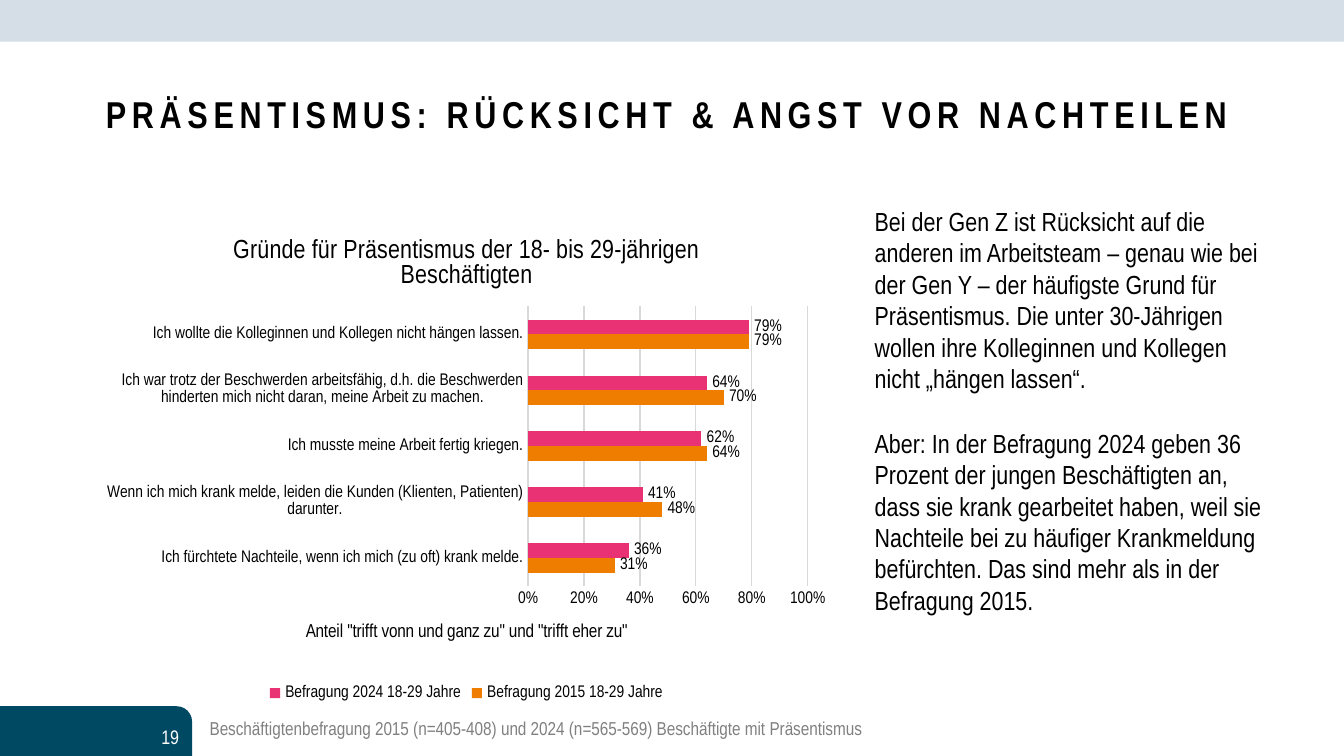
import pptx
import pptx.chart.data
import pptx.dml.color
import pptx.enum.chart
import pptx.enum.shapes
import pptx.enum.text
import pptx.oxml
import pptx.oxml.ns
import pptx.util

Inches = pptx.util.Inches
Pt = pptx.util.Pt
FONT = "Arial Narrow"
SLIDE_WIDTH = 10
SLIDE_HEIGHT = SLIDE_WIDTH * 9 / 16
CATEGORIES = [
    "Ich fürchtete Nachteile, wenn ich mich (zu oft) krank melde.",
    "Wenn ich mich krank melde, leiden die Kunden (Klienten, Patienten) darunter.",
    "Ich musste meine Arbeit fertig kriegen.",
    "Ich war trotz der Beschwerden arbeitsfähig, d.h. die Beschwerden "
    "hinderten mich nicht daran, meine Arbeit zu machen.",
    "Ich wollte die Kolleginnen und Kollegen nicht hängen lassen.",
]
SERIES = [
    ("Befragung 2015 18-29 Jahre", "EF7D00", [0.31, 0.48, 0.64, 0.70, 0.79]),
    ("Befragung 2024 18-29 Jahre", "E83274", [0.36, 0.41, 0.62, 0.64, 0.79]),
]
COMMENTARY = [
    "Bei der Gen Z ist Rücksicht auf die anderen im Arbeitsteam – genau wie bei "
    "der Gen Y – der häufigste Grund für Präsentismus. Die unter 30-Jährigen "
    "wollen ihre Kolleginnen und Kollegen nicht „hängen lassen“.",
    "Aber: In der Befragung 2024 geben 36 Prozent der jungen Beschäftigten an, "
    "dass sie krank gearbeitet haben, weil sie Nachteile bei zu häufiger "
    "Krankmeldung befürchten. Das sind mehr als in der Befragung 2015.",
]


def color(value):
    return pptx.dml.color.RGBColor.from_string(value)


def style_font(font, size, value="000000", bold=False):
    font.name = FONT
    font.size = Pt(size)
    font.bold = bold
    font.color.rgb = color(value)


def add_block(slide, kind, box, fill):
    shape = slide.shapes.add_shape(kind, *map(Inches, box))
    shape.shadow.inherit = False
    shape.fill.solid()
    shape.fill.fore_color.rgb = color(fill)
    shape.line.fill.background()
    return shape


def add_text(slide, box, texts, size, value="000000", bold=False, middle=False,
             align=pptx.enum.text.PP_ALIGN.LEFT, gap=0, inset=0.1, spacing=0):
    frame = slide.shapes.add_textbox(*map(Inches, box)).text_frame
    frame.word_wrap = True
    frame.margin_left = frame.margin_right = Inches(inset)
    frame.margin_top = frame.margin_bottom = Inches(0.05)
    anchors = pptx.enum.text.MSO_ANCHOR
    frame.vertical_anchor = anchors.MIDDLE if middle else anchors.TOP
    for index, text in enumerate(texts):
        paragraph = frame.add_paragraph() if index else frame.paragraphs[0]
        paragraph.alignment = align
        if index:
            paragraph.space_before = Pt(gap)
        run = paragraph.add_run()
        run.text = text
        style_font(run.font, size, value, bold)
        if spacing:
            run.font._element.set("spc", str(spacing * 100))


def add_layout(parent, following, chart_box, x, y, width=None, height=None):
    """Place a chart part, in inches from the chart corner, before the following tags."""
    chart_width, chart_height = chart_box[2:]
    values = {"xMode": "edge", "yMode": "edge",
              "x": x / chart_width, "y": y / chart_height}
    if width:
        values = {"layoutTarget": "inner", **values,
                  "w": width / chart_width, "h": height / chart_height}
    parts = "".join(f'<c:{tag} val="{value}"/>' for tag, value in values.items())
    namespace = pptx.oxml.ns.nsdecls("c")
    layout = pptx.oxml.parse_xml(
        f"<c:layout {namespace}><c:manualLayout>{parts}</c:manualLayout></c:layout>")
    for old in parent.findall(pptx.oxml.ns.qn("c:layout")):
        parent.remove(old)
    parent.insert_element_before(layout, *following)


def add_chart_title(title, text, size, chart_box, x, y):
    run = title.text_frame.paragraphs[0].add_run()
    run.text = text
    style_font(run.font, size)
    add_layout(title._element, ("c:overlay", "c:spPr", "c:txPr"), chart_box, x, y)


def add_reasons_chart(slide, box):
    data = pptx.chart.data.CategoryChartData(number_format="###0%")
    data.categories = CATEGORIES
    for name, _, values in SERIES:
        data.add_series(name, values)
    chart = slide.shapes.add_chart(
        pptx.enum.chart.XL_CHART_TYPE.BAR_CLUSTERED, *map(Inches, box), data).chart
    style_font(chart.font, 10)

    # Titles and plot area
    add_chart_title(
        chart.chart_title,
        "Gründe für Präsentismus der 18- bis 29-jährigen Beschäftigten",
        14, box, 1.01, 0.13)
    add_chart_title(
        chart.value_axis.axis_title,
        'Anteil "trifft vonn und ganz zu" und "trifft eher zu"',
        10, box, 1.56, 3.02)
    plot = chart.plots[0]
    plot_area = plot._element.getparent()
    add_layout(plot_area, ("c:barChart",), box, 3.24, 0.69, 2.08, 2.08)

    # Axes
    for axis in (chart.category_axis, chart.value_axis):
        axis.major_tick_mark = pptx.enum.chart.XL_TICK_MARK.NONE
        axis.minor_tick_mark = pptx.enum.chart.XL_TICK_MARK.NONE
        style_font(axis.tick_labels.font, 9)
    value_axis = chart.value_axis
    value_axis.minimum_scale, value_axis.maximum_scale = 0, 1
    value_axis.major_unit = 0.2
    value_axis.tick_labels.number_format = "###0%"
    value_axis.tick_labels.number_format_is_linked = False
    value_axis.format.line.fill.background()
    value_axis.has_major_gridlines = True
    for line in (chart.category_axis.format.line,
                 value_axis.major_gridlines.format.line):
        line.color.rgb = color("D9D9D9")
        line.width = Pt(0.75)

    # Bars and value labels
    plot.gap_width = 182
    plot.overlap = 0
    plot.vary_by_categories = False
    for series, (_, fill, _) in zip(plot.series, SERIES):
        series.format.fill.solid()
        series.format.fill.fore_color.rgb = color(fill)
        labels = series.data_labels
        labels.show_value = True
        labels.number_format = "###0%"
        labels.number_format_is_linked = False
        labels.position = pptx.enum.chart.XL_LABEL_POSITION.OUTSIDE_END
        style_font(labels.font, 9)

    # Legend
    chart.has_legend = True
    chart.legend.position = pptx.enum.chart.XL_LEGEND_POSITION.BOTTOM
    chart.legend.include_in_layout = False
    style_font(chart.legend.font, 9)


def add_header(slide, left, top, width):
    add_block(slide, pptx.enum.shapes.MSO_SHAPE.RECTANGLE,
              (left, top, width, 0.31), "D5DEE6")
    add_text(slide, (left + 0.69, top + 0.3, width - 1.38, 1.09),
             ["PRÄSENTISMUS: RÜCKSICHT & ANGST VOR NACHTEILEN"],
             20, bold=True, middle=True, spacing=3)


def add_footer(slide, left, top, height):
    tab = add_block(slide, pptx.enum.shapes.MSO_SHAPE.ROUND_1_RECTANGLE,
                    (left, top, 1.43, height), "004963")
    tab.adjustments[0] = 0.31
    add_text(slide, (left + 0.34, top + 0.08, 1.09, 0.3), ["19"], 10.5, "FFFFFF",
             middle=True, align=pptx.enum.text.PP_ALIGN.RIGHT)
    add_text(slide, (left + 1.51, top + 0.03, 7.17, 0.29),
             ["Beschäftigtenbefragung 2015 (n=405-408) und 2024 (n=565-569) "
              "Beschäftigte mit Präsentismus"], 10, "808080", inset=0.05)


def main():
    presentation = pptx.Presentation()
    presentation.slide_width = Inches(SLIDE_WIDTH)
    presentation.slide_height = Inches(SLIDE_HEIGHT)
    slide = presentation.slides.add_slide(presentation.slide_layouts[6])
    add_header(slide, 0, 0, SLIDE_WIDTH)
    add_reasons_chart(slide, (0.69, 1.59, 5.56, 3.67))
    add_text(slide, (6.41, 1.48, 3.08, 2.84), COMMENTARY, 14, gap=18)
    add_footer(slide, 0, SLIDE_HEIGHT - 0.37, 0.37)
    presentation.save("out.pptx")


if __name__ == "__main__":
    main()
